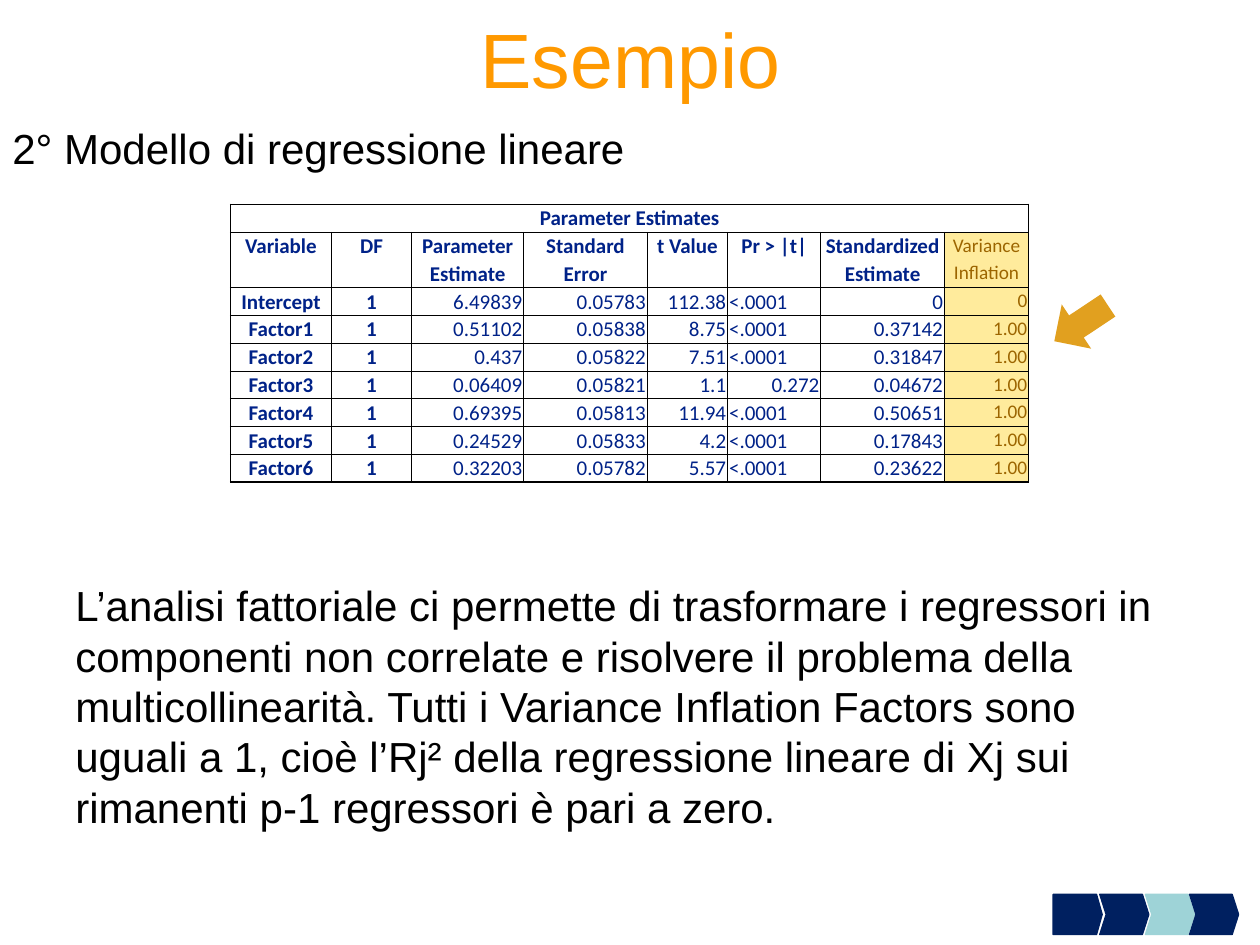
from lxml.etree import SubElement
from pptx import Presentation
from pptx.dml.color import RGBColor
from pptx.enum.shapes import MSO_SHAPE as SHAPE
from pptx.enum.text import MSO_ANCHOR as ANCHOR, MSO_AUTO_SIZE as AUTO, PP_ALIGN as ALIGN
from pptx.oxml import parse_xml
from pptx.oxml.ns import nsdecls, qn
from pptx.util import Cm, Pt

BLACK = RGBColor(0x00, 0x00, 0x00)
WHITE = RGBColor(0xFF, 0xFF, 0xFF)
ORANGE = RGBColor(0xFF, 0x99, 0x00)
BLUE = RGBColor(0x00, 0x22, 0x88)
BROWN = RGBColor(0x9C, 0x65, 0x00)
YELLOW = RGBColor(0xFF, 0xEB, 0x9C)
GOLD = RGBColor(0xE1, 0xA0, 0x1F)
NAVY = RGBColor(0x00, 0x20, 0x60)
TEAL = RGBColor(0x9E, 0xD3, 0xD7)

HEADER_ROWS = 3
STACKED_COLS = (2, 3, 6, 7)
COL_WIDTHS = (2.03, 1.62, 2.26, 2.49, 1.62, 1.88, 2.49, 1.7)
ROW_HEIGHT = 0.56
ROWS = (
    ("Parameter Estimates", "", "", "", "", "", "", ""),
    ("Variable", "DF", "Parameter", "Standard", "t Value", "Pr > |t|", "Standardized", "Variance"),
    ("", "", "Estimate", "Error", "", "", "Estimate", "Inflation"),
    ("Intercept", "1", "6.49839", "0.05783", "112.38", "<.0001", "0", "0"),
    ("Factor1", "1", "0.51102", "0.05838", "8.75", "<.0001", "0.37142", "1.00"),
    ("Factor2", "1", "0.437", "0.05822", "7.51", "<.0001", "0.31847", "1.00"),
    ("Factor3", "1", "0.06409", "0.05821", "1.1", "0.272", "0.04672", "1.00"),
    ("Factor4", "1", "0.69395", "0.05813", "11.94", "<.0001", "0.50651", "1.00"),
    ("Factor5", "1", "0.24529", "0.05833", "4.2", "<.0001", "0.17843", "1.00"),
    ("Factor6", "1", "0.32203", "0.05782", "5.57", "<.0001", "0.23622", "1.00"),
)
COMMENT = (
    "L’analisi fattoriale ci permette di trasformare i regressori in componenti non "
    "correlate e risolvere il problema della multicollinearità. Tutti i Variance "
    "Inflation Factors sono uguali a 1, cioè l’Rj² della regressione lineare di Xj sui "
    "rimanenti p-1 regressori è pari a zero."
)


def write(tf, text, size=24, font="Arial", color=BLACK, bold=False, align=ALIGN.LEFT):
    """Write one formatted paragraph into a text frame."""
    p = tf.paragraphs[0]
    p.alignment = align
    r = p.add_run()
    r.text = text
    r.font.size, r.font.name, r.font.bold = Pt(size), font, bold
    r.font.color.rgb = color


def add_title(s, text):
    """Place the title placeholder across the top of the slide."""
    sp = s.shapes.title
    sp.left, sp.top, sp.width, sp.height = Cm(0.43), Cm(-0.43), Cm(24.56), Cm(3.18)
    tf = sp.text_frame
    tf.auto_size, tf.vertical_anchor = AUTO.NONE, ANCHOR.MIDDLE
    write(tf, text, size=44, color=ORANGE, align=ALIGN.CENTER)


def add_text(s, text, x, y, w, h):
    """Add a wrapping text box."""
    tf = s.shapes.add_textbox(Cm(x), Cm(y), Cm(w), Cm(h)).text_frame
    tf.word_wrap = True
    write(tf, text)


def add_shape(s, kind, x, y, w, h, fill, adj, line=None, rotation=0):
    """Add a filled preset shape, outlined only when a line colour is given."""
    sp = s.shapes.add_shape(kind, Cm(x), Cm(y), Cm(w), Cm(h))
    sp.shadow.inherit = False
    sp.rotation = rotation
    for i, value in enumerate(adj):
        sp.adjustments[i] = value
    sp.fill.solid()
    sp.fill.fore_color.rgb = fill
    if line is None:
        sp.line.fill.background()
    else:
        sp.line.color.rgb = line
        sp.line.width = Pt(0.75)


def set_borders(cell, widths):
    """Set left, right, top and bottom borders in points, zero meaning none."""
    tc_pr = cell._tc.get_or_add_tcPr()
    for i, (side, width) in enumerate(zip("LRTB", widths)):
        ln = parse_xml(f'<a:ln{side} {nsdecls("a")} w="{Pt(width)}"/>')
        if width:
            fill = SubElement(ln, qn("a:solidFill"))
            SubElement(fill, qn("a:srgbClr")).set("val", str(BLACK))
        else:
            SubElement(ln, qn("a:noFill"))
        tc_pr.insert(i, ln)


def border_widths(row, col):
    """Return thick widths on the table edge and none inside split headings."""
    split = col in STACKED_COLS
    return (
        1 if col == 0 else 0.5,
        1 if col == len(COL_WIDTHS) - 1 or row == 0 else 0.5,
        1 if row == 0 else 0 if row == 2 and split else 0.5,
        1 if row == len(ROWS) - 1 else 0 if row == 1 and split else 0.5,
    )


def fill_cell(cell, row, col, text):
    """Format one cell of the estimates table by its position."""
    heading = row < HEADER_ROWS or col < 2
    inflation = row > 0 and col == len(COL_WIDTHS) - 1
    cell.margin_left = cell.margin_right = cell.margin_top = Cm(0.03)
    cell.margin_bottom = 0
    cell.fill.solid()
    cell.fill.fore_color.rgb = YELLOW if inflation else WHITE
    set_borders(cell, border_widths(row, col))
    if text:
        align = ALIGN.CENTER if heading else ALIGN.LEFT if text[0] == "<" else ALIGN.RIGHT
        write(cell.text_frame, text, size=11 if inflation else 12, font="Calibri",
              color=BROWN if inflation else BLUE, bold=heading and not inflation, align=align)


def add_estimates(s, x, y):
    """Add the table of parameter estimates."""
    n_rows, n_cols = len(ROWS), len(COL_WIDTHS)
    table = s.shapes.add_table(n_rows, n_cols, Cm(x), Cm(y), Cm(sum(COL_WIDTHS)),
                               Cm(n_rows * ROW_HEIGHT)).table
    table.first_row = table.horz_banding = False
    for column, width in zip(table.columns, COL_WIDTHS):
        column.width = Cm(width)
    for i, values in enumerate(ROWS):
        table.rows[i].height = Cm(ROW_HEIGHT)
        for j, text in enumerate(values):
            fill_cell(table.cell(i, j), i, j, text)
    table.cell(0, 0).merge(table.cell(0, n_cols - 1))
    for j in range(n_cols):
        if j not in STACKED_COLS:
            table.cell(1, j).merge(table.cell(2, j))


def add_progress(s):
    """Add the row of progress arrows at the bottom right."""
    steps = (
        (SHAPE.CHEVRON, 23.09, TEAL, 0.16),
        (SHAPE.PENTAGON, 21.23, NAVY, 0.14),
        (SHAPE.CHEVRON, 22.17, NAVY, 0.16),
        (SHAPE.CHEVRON, 23.98, NAVY, 0.16),
    )
    for kind, x, color, adj in steps:
        add_shape(s, kind, x, 18.03, 0.99, 0.81, color, (adj,), line=color)


def main():
    """Build the slide and save it."""
    prs = Presentation()
    prs.slide_width, prs.slide_height = Cm(25.4), Cm(19.05)
    s = prs.slides.add_slide(prs.slide_layouts[5])
    add_title(s, "Esempio")
    add_estimates(s, 4.65, 4.12)
    add_text(s, COMMENT, 1.27, 11.56, 22.66, 5.38)
    add_text(s, "2° Modello di regressione lineare", 0, 2.34, 25.4, 1.3)
    add_shape(s, SHAPE.DOWN_ARROW, 21.26, 5.87, 1.07, 1.3, GOLD, (0.5, 0.5), rotation=56.4)
    add_progress(s)
    prs.save("out.pptx")


if __name__ == "__main__":
    main()
